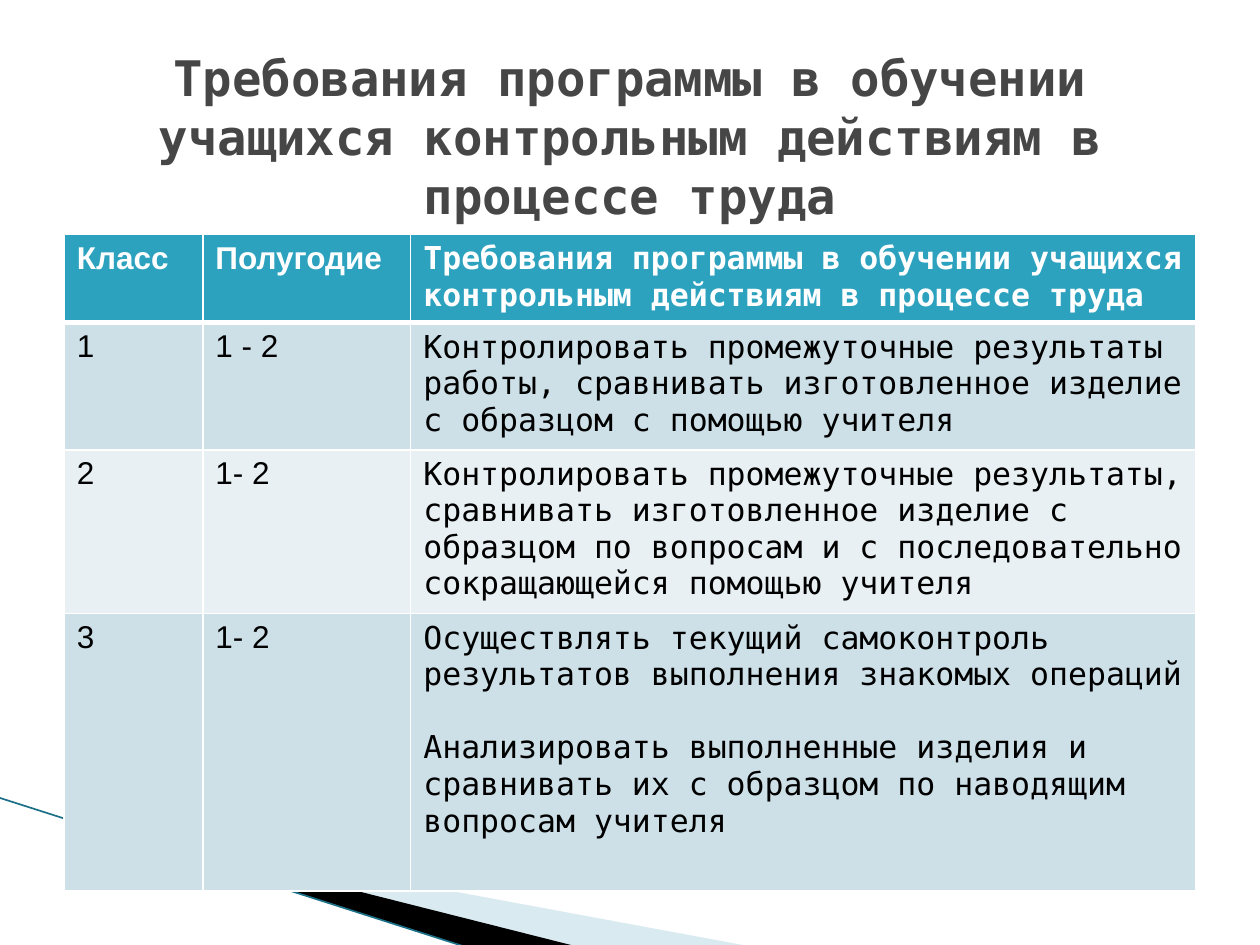
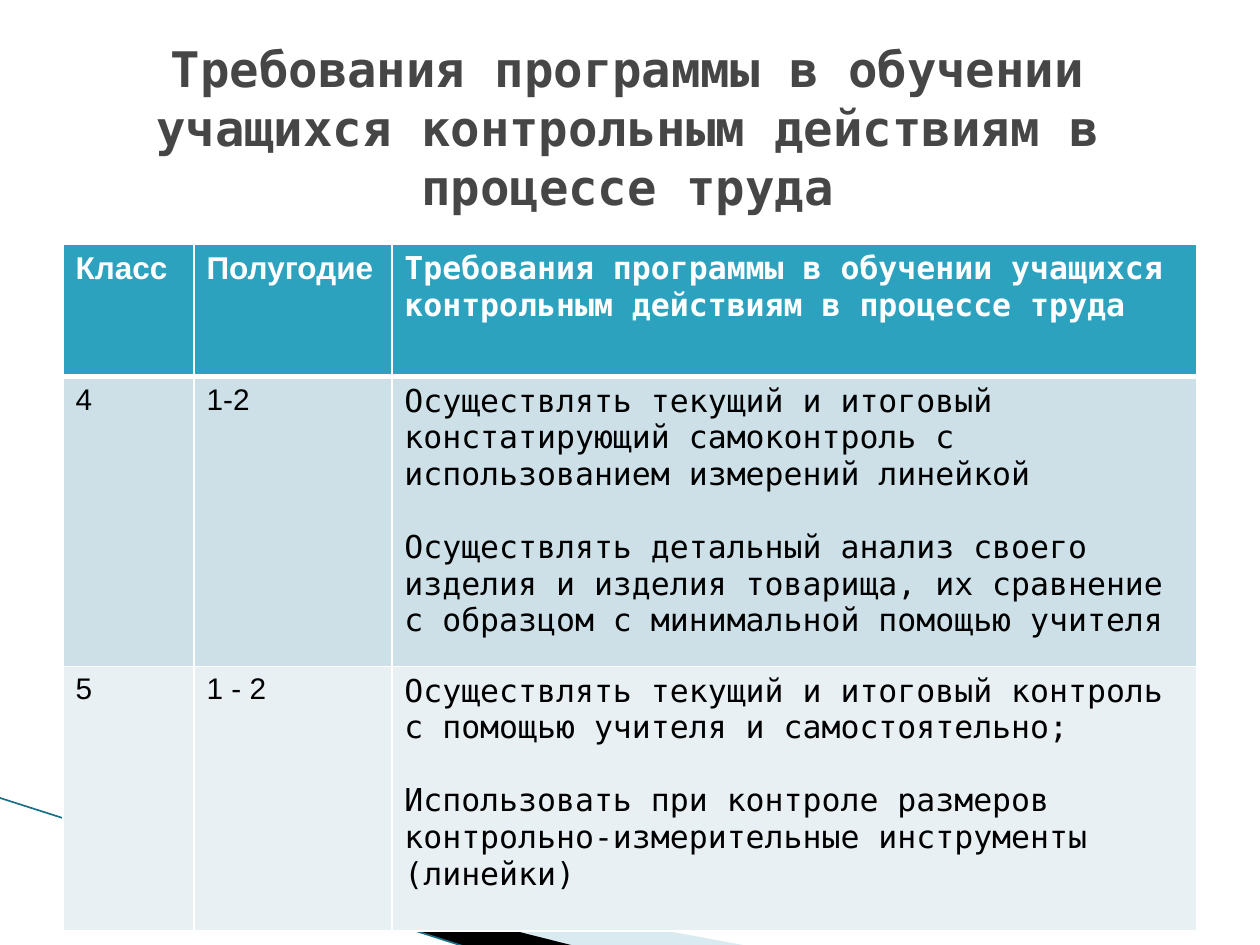
from dataclasses import dataclass

from lxml.etree import SubElement
from pptx import Presentation
from pptx.dml.color import RGBColor
from pptx.enum.shapes import MSO_CONNECTOR as Connector
from pptx.enum.text import MSO_ANCHOR as Anchor, MSO_AUTO_SIZE as AutoSize, PP_ALIGN as Align
from pptx.oxml import parse_xml
from pptx.oxml.ns import nsdecls, qn
from pptx.util import Pt

EMU_PER_PX = 9144
TITLE_ONLY = 5


@dataclass(frozen=True)
class Theme:
    sans: str = "Arial"
    mono: str = "DejaVu Sans Mono"
    title: str = "464646"
    header: str = "2DA2BF"
    rows: tuple = ("CDE0E8", "E8F0F4")
    white: str = "FFFFFF"
    black: str = "000000"
    band: str = "A0CBDC"
    band_alpha: int = 40
    stripe: str = "1B7087"
    stripe_width: float = 0.95
    title_size: int = 28
    cell_size: int = 18
    paragraph_gap: int = 21
    border: int = 1
    header_border: int = 3


THEME = Theme()
HEADING = "Требования программы в обучении учащихся контрольным действиям в процессе труда"
HEADER = ("Класс", "Полугодие", HEADING)

BANDS = (
    (((55, 651), (595, 751), (456, 751), (55, 650)), THEME.band, THEME.band_alpha),
    (((53, 649), (457, 751), (372, 752), (54, 650)), THEME.black, 100),
)
STRIPE = (-1, 633, 371, 752)

SLIDES = (
    {
        "title_box": (50, 30, 900, 156),
        "table_box": (51, 186, 898, 521),
        "columns": (110, 165, 623),
        "heights": (70, 101, 130, 220),
        "label_size": 18,
        "rows": (
            ("1", "1 - 2", "Контролировать промежуточные результаты работы, "
             "сравнивать изготовленное изделие с образцом с помощью учителя"),
            ("2", "1- 2", "Контролировать промежуточные результаты, сравнивать изготовленное изделие "
             "с образцом по вопросам и с последовательно сокращающейся помощью учителя"),
            ("3", "1- 2", "Осуществлять текущий самоконтроль результатов выполнения знакомых операций\n"
             "Анализировать выполненные изделия и сравнивать их с образцом "
             "по наводящим вопросам учителя"),
        ),
    },
    {
        "title_box": (48, 38, 900, 125),
        "table_box": (50, 194, 900, 545),
        "columns": (104, 157, 639),
        "heights": (105, 230, 210),
        "label_size": 17,
        "rows": (
            ("4", "1-2", "Осуществлять текущий и итоговый констатирующий самоконтроль "
             "с использованием измерений линейкой\n"
             "Осуществлять детальный анализ своего изделия и изделия товарища, "
             "их сравнение с образцом с минимальной помощью учителя"),
            ("5", "1 - 2", "Осуществлять текущий и итоговый контроль "
             "с помощью учителя и самостоятельно;\n"
             "Использовать при контроле размеров контрольно-измерительные инструменты (линейки)"),
        ),
    },
)


def px(value):
    return value * EMU_PER_PX


def apply(target, values):
    for name, value in values.items():
        setattr(target, name, value)


def format_font(font, name, size, color, bold):
    apply(font, {"name": name, "size": Pt(size), "bold": bold})
    font.color.rgb = RGBColor.from_string(color)


def fill_solid(fill, color):
    fill.solid()
    fill.fore_color.rgb = RGBColor.from_string(color)


def add_band(slide, points, color, alpha):
    builder = slide.shapes.build_freeform(*points[0], scale=EMU_PER_PX)
    builder.add_line_segments(points[1:], close=True)
    shape = builder.convert_to_shape()
    shape.shadow.inherit = False
    shape.line.fill.background()
    fill_solid(shape.fill, color)
    if alpha < 100:
        color_element = shape.fill._xPr.find(".//" + qn("a:srgbClr"))
        SubElement(color_element, qn("a:alpha")).set("val", str(alpha * 1000))


def add_corner(slide):
    for points, color, alpha in BANDS:
        add_band(slide, points, color, alpha)
    stripe = slide.shapes.add_connector(Connector.STRAIGHT, *map(px, STRIPE))
    stripe.line.color.rgb = RGBColor.from_string(THEME.stripe)
    stripe.line.width = Pt(THEME.stripe_width)
    SubElement(stripe._element.spPr, qn("a:effectLst"))


def place_title(slide, box):
    title = slide.shapes.title
    apply(title, dict(zip(("left", "top", "width", "height"), map(px, box))))
    frame = title.text_frame
    frame.text = HEADING
    apply(frame, {"word_wrap": True, "auto_size": AutoSize.NONE, "vertical_anchor": Anchor.MIDDLE})
    paragraph = frame.paragraphs[0]
    paragraph.alignment = Align.CENTER
    format_font(paragraph.runs[0].font, THEME.mono, THEME.title_size, THEME.title, True)


def set_borders(cell, top, bottom):
    properties = cell._tc.get_or_add_tcPr()
    widths = {"lnL": THEME.border, "lnR": THEME.border, "lnT": top, "lnB": bottom}
    for index, (side, width) in enumerate(widths.items()):
        properties.insert(index, parse_xml(
            f'<a:{side} {nsdecls("a")} w="{Pt(width)}"><a:solidFill>'
            f'<a:srgbClr val="{THEME.white}"/></a:solidFill></a:{side}>'))


def fill_cell(cell, text, font_values, fill):
    fill_solid(cell.fill, fill)
    cell.text_frame.text = text
    for index, paragraph in enumerate(cell.text_frame.paragraphs):
        if index:
            paragraph.space_before = Pt(THEME.paragraph_gap)
        format_font(paragraph.runs[0].font, *font_values)


def add_requirements(slide, content):
    records = (HEADER, *content["rows"])
    table = slide.shapes.add_table(
        len(records), len(HEADER), *map(px, content["table_box"])).table
    for column, width in zip(table.columns, content["columns"]):
        column.width = px(width)
    for row, height in zip(table.rows, content["heights"]):
        row.height = px(height)
    for row_index, record in enumerate(records):
        is_header = row_index == 0
        fill = THEME.header if is_header else THEME.rows[(row_index - 1) % 2]
        color = THEME.white if is_header else THEME.black
        top = THEME.header_border if row_index == 1 else THEME.border
        bottom = THEME.header_border if is_header else THEME.border
        for column_index, text in enumerate(record):
            is_label = column_index < 2
            name = THEME.sans if is_label else THEME.mono
            size = content["label_size"] if is_label and not is_header else THEME.cell_size
            cell = table.cell(row_index, column_index)
            fill_cell(cell, text, (name, size, color, is_header), fill)
            set_borders(cell, top, bottom)


def add_requirements_slide(presentation, content):
    slide = presentation.slides.add_slide(presentation.slide_layouts[TITLE_ONLY])
    fill_solid(slide.background.fill, THEME.white)
    add_corner(slide)
    add_requirements(slide, content)
    place_title(slide, content["title_box"])


def main():
    presentation = Presentation()
    apply(presentation, {"slide_width": px(1000), "slide_height": px(750)})
    for content in SLIDES:
        add_requirements_slide(presentation, content)
    presentation.save("out.pptx")


if __name__ == "__main__":
    main()
